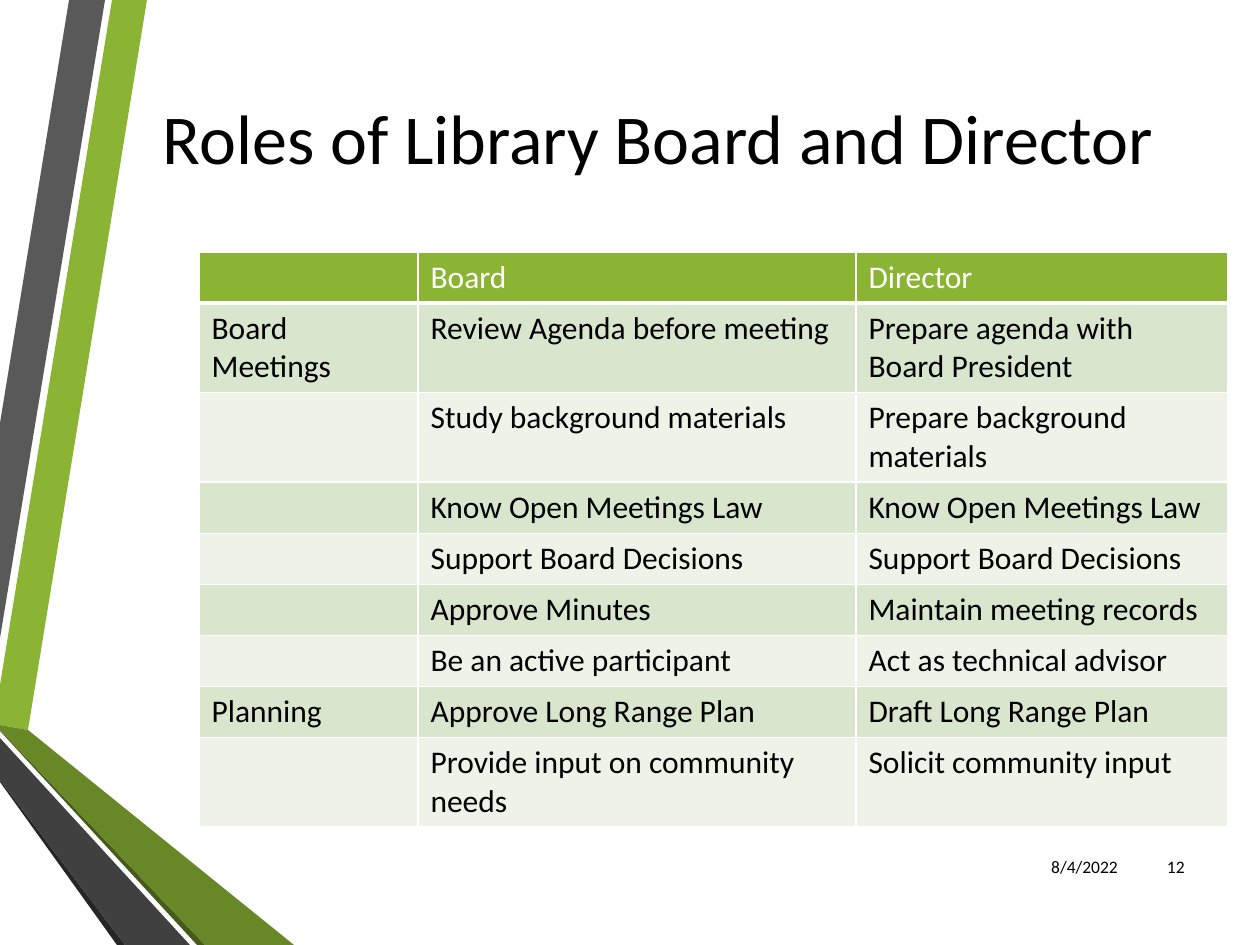
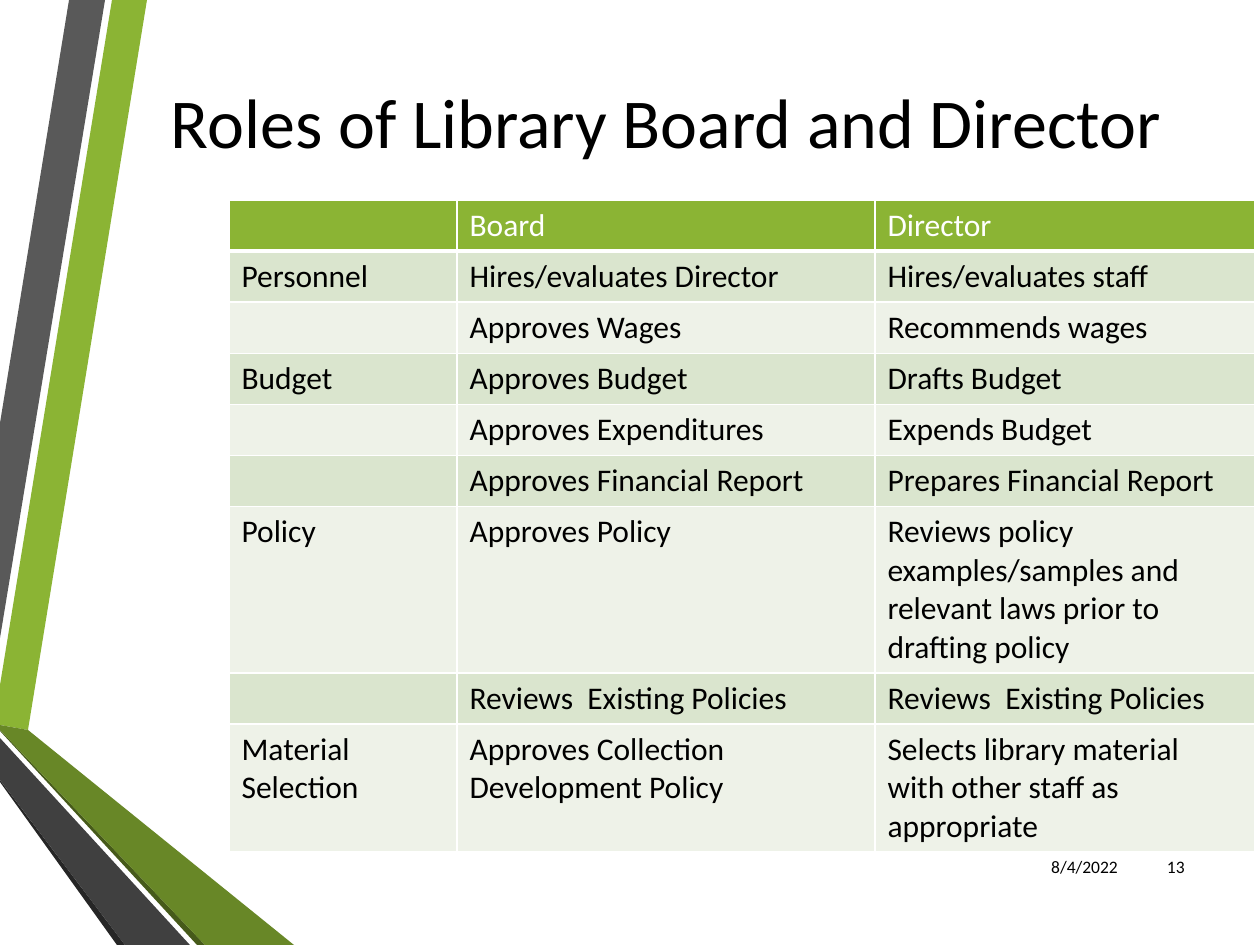
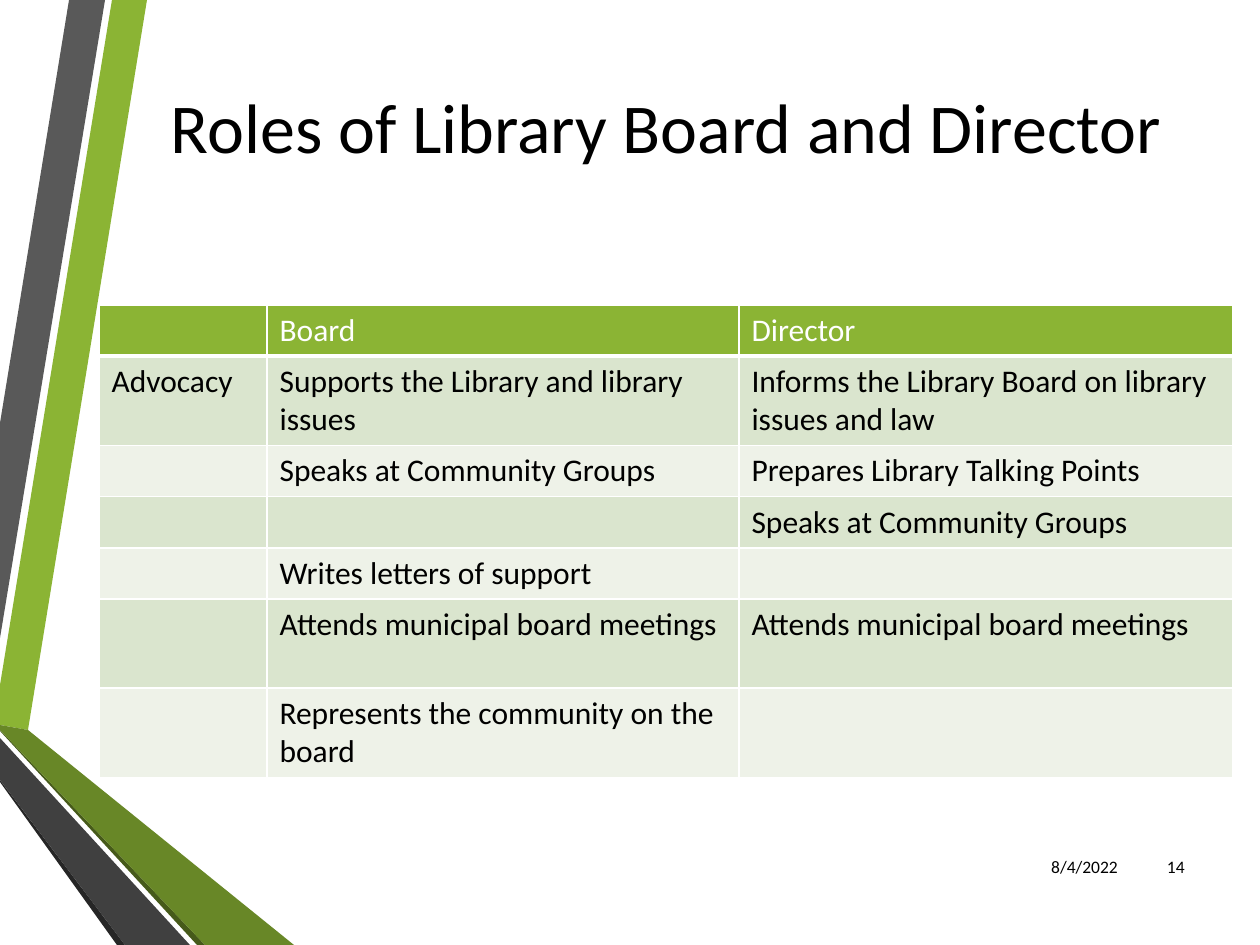
from lxml.etree import SubElement
from pptx import Presentation
from pptx.dml.color import RGBColor
from pptx.enum.text import MSO_ANCHOR as Anchor, MSO_AUTO_SIZE as AutoSize, PP_ALIGN as Align
from pptx.oxml.ns import qn
from pptx.util import Emu, Pt

SCALE = 914400 / 126
SLIDE_WIDTH, SLIDE_HEIGHT = 1260, 945
FONT = "Calibri"
BLACK = RGBColor(0x00, 0x00, 0x00)
WHITE = RGBColor(0xFF, 0xFF, 0xFF)
GREEN = RGBColor(0x8B, 0xB4, 0x34)
LEAF = RGBColor(0x68, 0x87, 0x27)
MOSS = RGBColor(0x46, 0x5A, 0x1A)
GREY = RGBColor(0x59, 0x59, 0x59)
CHARCOAL = RGBColor(0x40, 0x40, 0x40)
SOOT = RGBColor(0x26, 0x26, 0x26)
ROW_FILLS = (RGBColor(0xDA, 0xE5, 0xCE), RGBColor(0xEE, 0xF2, 0xE8))

TITLE_FORMAT = {"name": FONT, "size": Pt(40), "color": BLACK}
HEADING_FORMAT = {"name": FONT, "size": Pt(18), "bold": False, "color": WHITE}
ROLE_FORMAT = {**HEADING_FORMAT, "color": BLACK}
FOOTER_FORMAT = {"name": FONT, "size": Pt(10), "color": BLACK}

RIBBONS = [
    (GREEN, [(0, 685), (0, 725), (28, 730), (147, 0), (112, 0)]),
    (GREY, [(105, 0), (69, 0), (0, 423), (0, 638)]),
    (SOOT, [(0, 780), (0, 782), (117, 945), (125, 945)]),
    (MOSS, [(0, 730), (0, 731), (197, 945), (205, 945)]),
    (LEAF, [(0, 730), (205, 945), (294, 945), (28, 730), (0, 725)]),
    (CHARCOAL, [(0, 780), (125, 945), (190, 945), (0, 738)]),
]

HEADINGS = ("", "Board", "Director")
DATE = "8/4/2022"
FIRST_NUMBER = 12
TITLE_LEFT, TITLE_TOP, TITLE_WIDTH = 135, 63, 1062
DATE_BOX = (1012, 842, 118, 50)
NUMBER_BOX = (1138, 842, 59, 50)
ROW_PADDING, LINE_HEIGHT = 13, 38

SLIDES = [
    {
        "title": "Roles of Library Board and Director ",
        "title_height": 147,
        "corner": (199, 252),
        "columns": (219, 438, 372),
        "roles": [
            (2, "Board Meetings", "Review Agenda before meeting", "Prepare agenda with Board President"),
            (2, "", "Study background materials", "Prepare background materials"),
            (1, "", "Know Open Meetings Law", "Know Open Meetings Law"),
            (1, "", "Support Board Decisions", "Support Board Decisions"),
            (1, "", "Approve Minutes", "Maintain meeting records"),
            (1, "", "Be an active participant", "Act as technical advisor"),
            (1, "Planning", "Approve Long Range Plan", "Draft Long Range Plan"),
            (2, "", "Provide input on community needs", "Solicit community input"),
        ],
    },
    {
        "title": "Roles of Library Board and Director",
        "title_height": 116,
        "corner": (229, 200),
        "columns": (228, 418, 380),
        "roles": [
            (1, "Personnel", "Hires/evaluates Director", "Hires/evaluates staff"),
            (1, "", "Approves Wages", "Recommends wages"),
            (1, "Budget", "Approves Budget", "Drafts Budget"),
            (1, "", "Approves Expenditures", "Expends Budget"),
            (1, "", "Approves Financial Report", "Prepares Financial Report"),
            (4, "Policy", "Approves Policy",
             "Reviews policy examples/samples and relevant laws prior to drafting policy"),
            (1, "", "Reviews  Existing Policies", "Reviews  Existing Policies"),
            (3, "Material Selection", "Approves Collection Development Policy",
             "Selects library material with other staff as appropriate"),
        ],
    },
    {
        "title": "Roles of Library Board and Director",
        "title_height": 126,
        "corner": (99, 305),
        "columns": (168, 472, 494),
        "roles": [
            (2, "Advocacy", "Supports the Library and library issues",
             "Informs the Library Board on library issues and law"),
            (1, "", "Speaks at Community Groups", "Prepares Library Talking Points"),
            (1, "", "", "Speaks at Community Groups"),
            (1, "", "Writes letters of support", ""),
            (2, "", "Attends municipal board meetings", "Attends municipal board meetings"),
            (2, "", "Represents the community on the board", ""),
        ],
    },
]


def px(length):
    return Emu(round(length * SCALE))


def write(frame, text, formats, align):
    paragraph = frame.paragraphs[0]
    paragraph.alignment = align
    if not text:
        return
    run = paragraph.add_run()
    run.text = text
    for key, value in formats.items():
        if key == "color":
            run.font.color.rgb = value
        else:
            setattr(run.font, key, value)


def add_ribbons(slide, master):
    for color, points in RIBBONS:
        outline = slide.shapes.build_freeform(*points[0], scale=SCALE)
        outline.add_line_segments(points[1:], close=True)
        ribbon = outline.convert_to_shape()
        ribbon.fill.solid()
        ribbon.fill.fore_color.rgb = color
        ribbon.line.fill.background()
        ribbon.shadow.inherit = False
        master.shapes.element.append(ribbon.element)


def add_title(slide, text, height):
    title = slide.shapes.title
    box = {"left": TITLE_LEFT, "top": TITLE_TOP, "width": TITLE_WIDTH, "height": height}
    for side, length in box.items():
        setattr(title, side, px(length))
    frame = title.text_frame
    frame.auto_size = AutoSize.NONE
    frame.vertical_anchor = Anchor.MIDDLE
    write(frame, text, TITLE_FORMAT, Align.CENTER)


def add_footer(slide, box, text):
    frame = slide.shapes.add_textbox(*map(px, box)).text_frame
    frame.word_wrap = True
    frame.vertical_anchor = Anchor.MIDDLE
    write(frame, text, FOOTER_FORMAT, Align.RIGHT)


def add_borders(cell, bottom):
    properties = cell._tc.get_or_add_tcPr()
    widths = {"a:lnL": 1, "a:lnR": 1, "a:lnT": 1, "a:lnB": bottom}
    for position, (side, width) in enumerate(widths.items()):
        border = SubElement(properties, qn(side), w=str(Pt(width)))
        fill = SubElement(border, qn("a:solidFill"))
        SubElement(fill, qn("a:srgbClr"), val=str(WHITE))
        properties.insert(position, border)


def add_roles(slide, corner, columns, roles):
    rows = [(1, *HEADINGS), *roles]
    heights = [ROW_PADDING + LINE_HEIGHT * lines for lines, *_ in rows]
    box = (*corner, sum(columns), sum(heights))
    table = slide.shapes.add_table(len(rows), len(columns), *map(px, box)).table
    for column, width in zip(table.columns, columns):
        column.width = px(width)
    for index, (height, (_, *texts)) in enumerate(zip(heights, rows)):
        table.rows[index].height = px(height)
        heading = index == 0
        for cell, text in zip(table.rows[index].cells, texts):
            cell.fill.solid()
            cell.fill.fore_color.rgb = GREEN if heading else ROW_FILLS[(index - 1) % 2]
            add_borders(cell, 3 if heading else 1)
            write(cell.text_frame, text, HEADING_FORMAT if heading else ROLE_FORMAT, Align.LEFT)


def main():
    deck = Presentation()
    deck.slide_width, deck.slide_height = px(SLIDE_WIDTH), px(SLIDE_HEIGHT)
    title_only = deck.slide_layouts.get_by_name("Title Only")
    for number, content in enumerate(SLIDES, FIRST_NUMBER):
        slide = deck.slides.add_slide(title_only)
        if number == FIRST_NUMBER:
            add_ribbons(slide, deck.slide_master)
        add_title(slide, content["title"], content["title_height"])
        add_roles(slide, content["corner"], content["columns"], content["roles"])
        add_footer(slide, DATE_BOX, DATE)
        add_footer(slide, NUMBER_BOX, str(number))
    deck.save("out.pptx")


if __name__ == "__main__":
    main()
